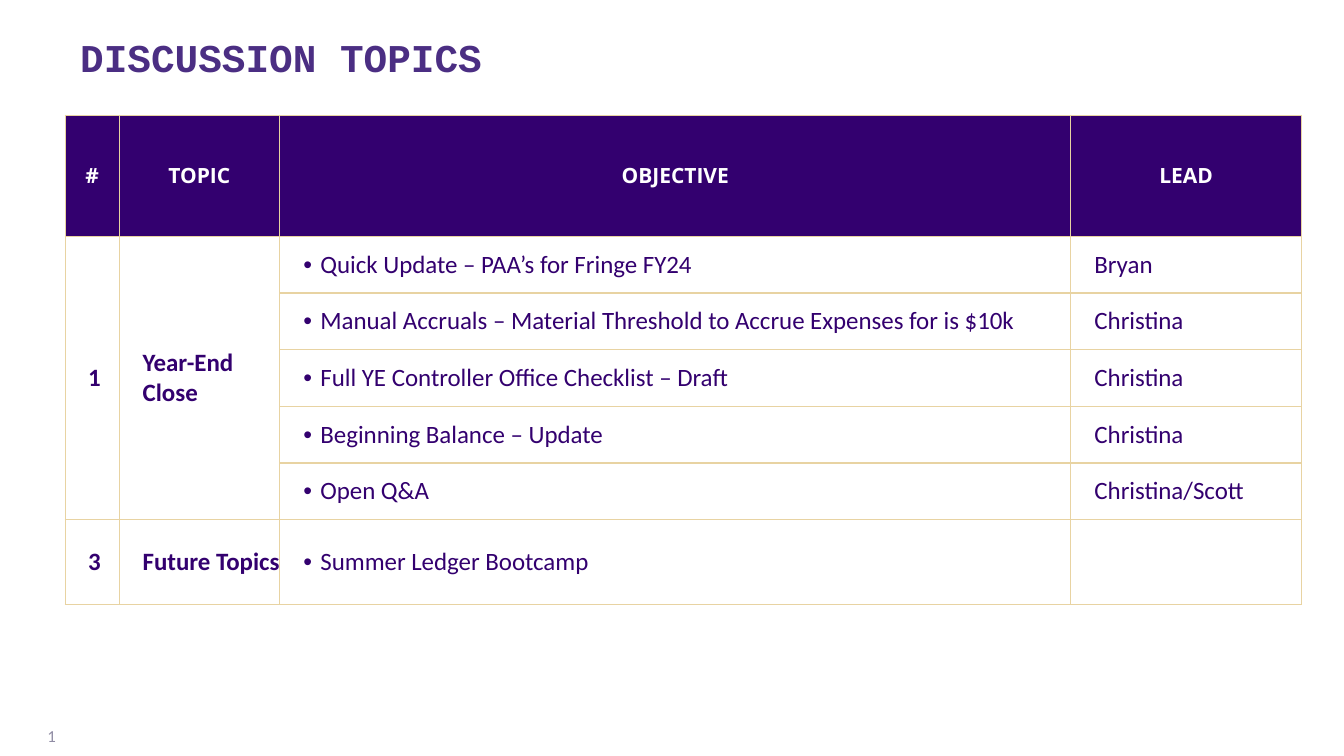
from lxml import etree
from pptx import Presentation
from pptx import util as u
from pptx.dml.color import RGBColor
from pptx.enum import text
from pptx.oxml.ns import qn

PURPLE, TITLE_PURPLE, GOLD = "33006F", "4B2E83", "E8D3A2"
WHITE, GREY = "FFFFFF", "908CA4"
LEFT, CENTER, RIGHT = text.PP_ALIGN.LEFT, text.PP_ALIGN.CENTER, text.PP_ALIGN.RIGHT

HEADINGS = ["#", "TOPIC", "OBJECTIVE", "LEAD"]
TOPICS = [
    ("1", "Year-End Close", [
        ("Quick Update – PAA’s for Fringe FY24", "Bryan"),
        ("Manual Accruals – Material Threshold to Accrue Expenses for is $10k", "Christina"),
        ("Full YE Controller Office Checklist – Draft", "Christina"),
        ("Beginning Balance – Update", "Christina"),
        ("Open Q&A", "Christina/Scott"),
    ]),
    ("3", "Future Topics", [("Summer Ledger Bootcamp", "")]),
]
COLUMN_WIDTHS = [0.57, 1.7, 8.37, 2.44]
ROW_HEIGHTS = [1.28] + [0.6] * 5 + [0.9]


def color(value):
    return RGBColor.from_string(value)


class AgendaSlide:
    def __init__(self, slide):
        self.slide = slide

    def style(self, paragraph, size, font, fill, bold=False, align=LEFT):
        paragraph.alignment = align
        paragraph.font.size = u.Pt(size)
        paragraph.font.name = font
        paragraph.font.bold = bold
        paragraph.font.color.rgb = color(fill)

    def text_box(self, words, left, top, width, height, anchor, line_spacing=1.0, **style):
        box = self.slide.shapes.add_textbox(*map(u.Inches, (left, top, width, height)))
        frame = box.text_frame
        frame.word_wrap = True
        frame.vertical_anchor = anchor
        paragraph = frame.paragraphs[0]
        paragraph.text = words
        paragraph.line_spacing = line_spacing
        self.style(paragraph, **style)

    def table(self, left, top, widths, heights):
        frame = self.slide.shapes.add_table(
            len(heights), len(widths), u.Inches(left), u.Inches(top),
            u.Inches(sum(widths)), u.Inches(sum(heights)))
        table = frame.table
        for column, width in zip(table.columns, widths):
            column.width = u.Inches(width)
        for row, height in zip(table.rows, heights):
            row.height = u.Inches(height)
        for cell in table.iter_cells():
            self.borders(cell)
            cell.fill.background()
        return table

    def borders(self, cell):
        properties = cell._tc.get_or_add_tcPr()
        for side in ("a:lnL", "a:lnR", "a:lnT", "a:lnB"):
            line = etree.SubElement(properties, qn(side), w=str(u.Pt(1)))
            fill = etree.SubElement(line, qn("a:solidFill"))
            etree.SubElement(fill, qn("a:srgbClr"), val=GOLD)

    def cell(self, cell, words, inset=0.05, margin=0, hanging=0, **style):
        cell.vertical_anchor = text.MSO_ANCHOR.MIDDLE
        cell.margin_left = u.Inches(inset)
        cell.margin_right = cell.margin_top = cell.margin_bottom = 0
        paragraph = cell.text_frame.paragraphs[0]
        paragraph.text = words
        properties = paragraph._p.get_or_add_pPr()
        properties.set("marL", str(u.Inches(margin)))
        properties.set("indent", str(-u.Inches(hanging)))
        if hanging:
            etree.SubElement(properties, qn("a:buFont"), typeface="Arial")
            etree.SubElement(properties, qn("a:buChar"), char="•")
        self.style(paragraph, **style)

    def heading_cell(self, cell, words):
        cell.fill.solid()
        cell.fill.fore_color.rgb = color(PURPLE)
        self.cell(cell, words, inset=0, size=16, font="Open Sans", fill=WHITE,
                  bold=True, align=CENTER)

    def body_cell(self, cell, words, **options):
        self.cell(cell, words, size=19, font="Calibri", fill=PURPLE, **options)


def main():
    presentation = Presentation()
    presentation.slide_width, presentation.slide_height = u.Inches(14.22), u.Inches(8)
    agenda = AgendaSlide(presentation.slides.add_slide(presentation.slide_layouts[6]))

    # Title and page number
    agenda.text_box("DISCUSSION TOPICS", 0.75, 0.36, 12.45, 0.52, text.MSO_ANCHOR.TOP,
                    line_spacing=0.9, size=30, font="Courier New", fill=TITLE_PURPLE, bold=True)
    agenda.text_box("1", 0.19, 7.57, 0.5, 0.43, text.MSO_ANCHOR.MIDDLE,
                    size=12.8, font="Calibri", fill=GREY, align=RIGHT)

    # Table headings
    table = agenda.table(0.69, 1.22, COLUMN_WIDTHS, ROW_HEIGHTS)
    for column, heading in enumerate(HEADINGS):
        agenda.heading_cell(table.cell(0, column), heading)

    # Topics, each spanning its objectives
    row = 1
    for number, topic, objectives in TOPICS:
        last = row + len(objectives) - 1
        if last > row:
            for column in (0, 1):
                table.cell(row, column).merge(table.cell(last, column))
        agenda.body_cell(table.cell(row, 0), number, bold=True, align=CENTER)
        agenda.body_cell(table.cell(row, 1), topic, margin=0.2, bold=True)
        for objective, lead in objectives:
            agenda.body_cell(table.cell(row, 2), objective, margin=0.38, hanging=0.18)
            agenda.body_cell(table.cell(row, 3), lead, margin=0.2)
            row += 1

    presentation.save("out.pptx")


if __name__ == "__main__":
    main()
